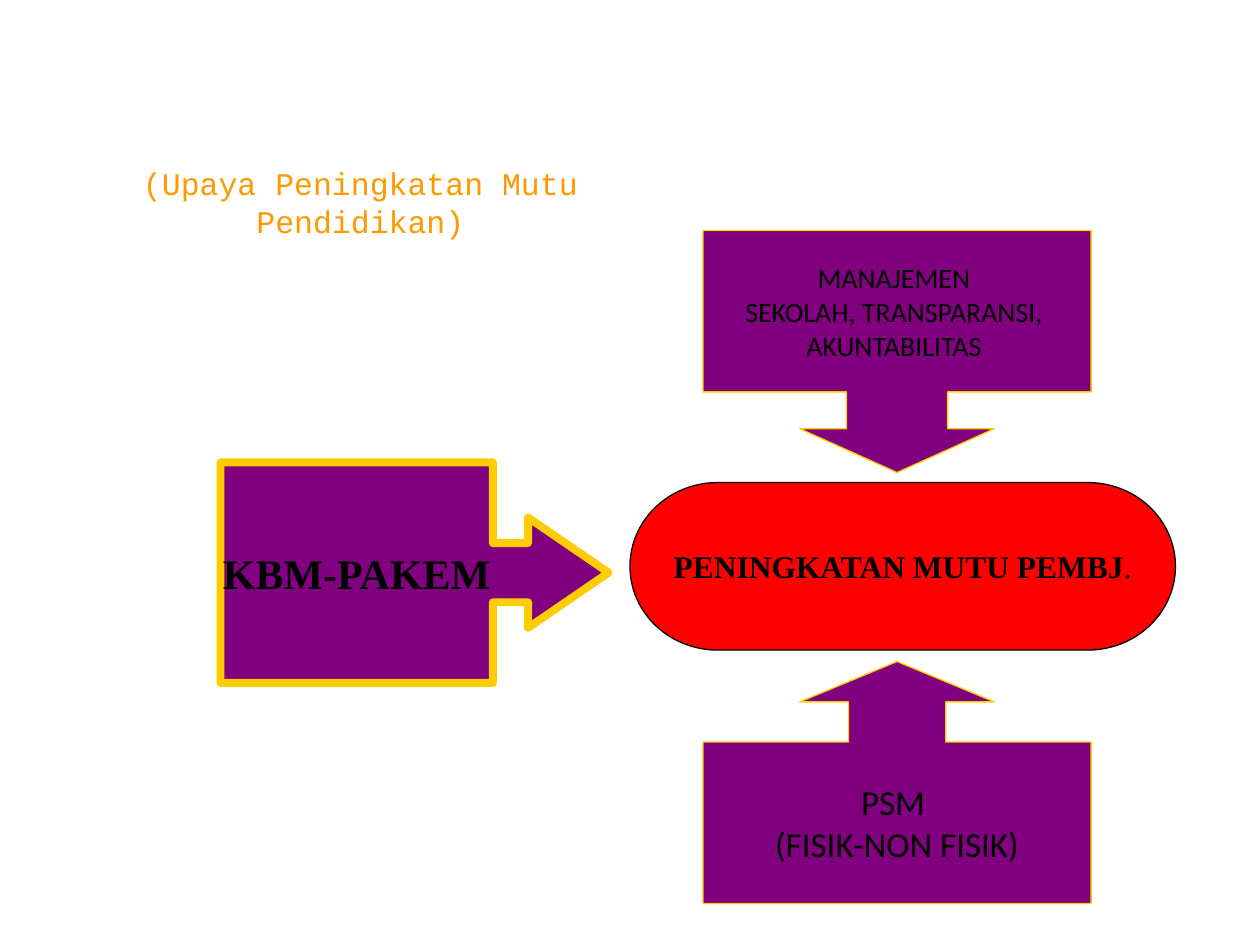
from dataclasses import dataclass

from pptx import Presentation
from pptx.dml.color import RGBColor
from pptx.enum.shapes import MSO_SHAPE
from pptx.enum.text import MSO_ANCHOR, MSO_AUTO_SIZE, PP_ALIGN
from pptx.util import Inches, Pt


@dataclass(frozen=True)
class Theme:
    purple: RGBColor = RGBColor.from_string("800080")
    gold: RGBColor = RGBColor.from_string("FFCC00")
    red: RGBColor = RGBColor.from_string("FF0000")
    orange: RGBColor = RGBColor.from_string("FF9900")
    black: RGBColor = RGBColor.from_string("000000")
    sans: str = "Calibri"
    serif: str = "Times New Roman"
    mono: str = "Courier New"
    small: int = 16
    medium: int = 18
    large: int = 20
    huge: int = 24
    thin: float = 0.75
    thick: float = 4.5


theme = Theme()


def write_text(tf, lines, size, font, color=theme.black, bold=False, anchor=MSO_ANCHOR.MIDDLE):
    tf.word_wrap = False
    tf.auto_size = MSO_AUTO_SIZE.NONE
    tf.vertical_anchor = anchor
    for i, line in enumerate(lines):
        p = tf.paragraphs[0] if i == 0 else tf.add_paragraph()
        p.alignment = PP_ALIGN.CENTER
        for j, text in enumerate(line):
            r = p.add_run()
            r.text = text
            r.font.size = Pt(size)
            r.font.name = font
            r.font.color.rgb = color
            r.font.bold = bold and j == 0


def add_block(kind, box, fill, line, width, adjustments=()):
    sp = s.shapes.add_shape(kind, *map(Inches, box))
    sp.shadow.inherit = False
    sp.fill.solid()
    sp.fill.fore_color.rgb = fill
    sp.line.color.rgb = line
    sp.line.width = Pt(width)
    for i, value in enumerate(adjustments):
        sp.adjustments[i] = value
    return sp


prs = Presentation()
prs.slide_width = Inches(10)
prs.slide_height = Inches(7.5)
s = prs.slides.add_slide(prs.slide_layouts[5])

title = s.shapes.title
title.left, title.top, title.width, title.height = map(Inches, (0.75, 1.25, 4.22, 0.34))
write_text(title.text_frame, [["(Upaya Peningkatan Mutu Pendidikan)"]],
           size=theme.medium, font=theme.mono, color=theme.orange, anchor=MSO_ANCHOR.TOP)

goal = add_block(MSO_SHAPE.FLOWCHART_TERMINATOR, (5, 3.83, 4.33, 1.33),
                 theme.red, theme.black, theme.thin)
write_text(goal.text_frame, [["PENINGKATAN MUTU PEMBJ", "."]],
           size=theme.medium, font=theme.serif, bold=True)

callouts = [
    (MSO_SHAPE.DOWN_ARROW_CALLOUT, (5.58, 1.83, 3.08, 1.92), (0.418, 0.402, 0.181, 0.667), theme.thin,
     [["MANAJEMEN "], ["SEKOLAH, TRANSPARANSI, "], ["AKUNTABILITAS "]],
     dict(size=theme.small, font=theme.sans)),
    (MSO_SHAPE.UP_ARROW_CALLOUT, (5.58, 5.25, 3.08, 1.92), (0.402, 0.402, 0.167, 0.667), theme.thin,
     [["PSM "], ["(FISIK-NON FISIK)"]],
     dict(size=theme.large, font=theme.sans)),
    (MSO_SHAPE.RIGHT_ARROW_CALLOUT, (1.75, 3.67, 3.08, 1.75), (0.268, 0.25, 0.365, 0.702), theme.thick,
     [["KBM-PAKEM"]],
     dict(size=theme.huge, font=theme.serif, bold=True)),
]
for kind, box, adjustments, width, lines, style in callouts:
    sp = add_block(kind, box, theme.purple, theme.gold, width, adjustments)
    write_text(sp.text_frame, lines, **style)

prs.save("out.pptx")
